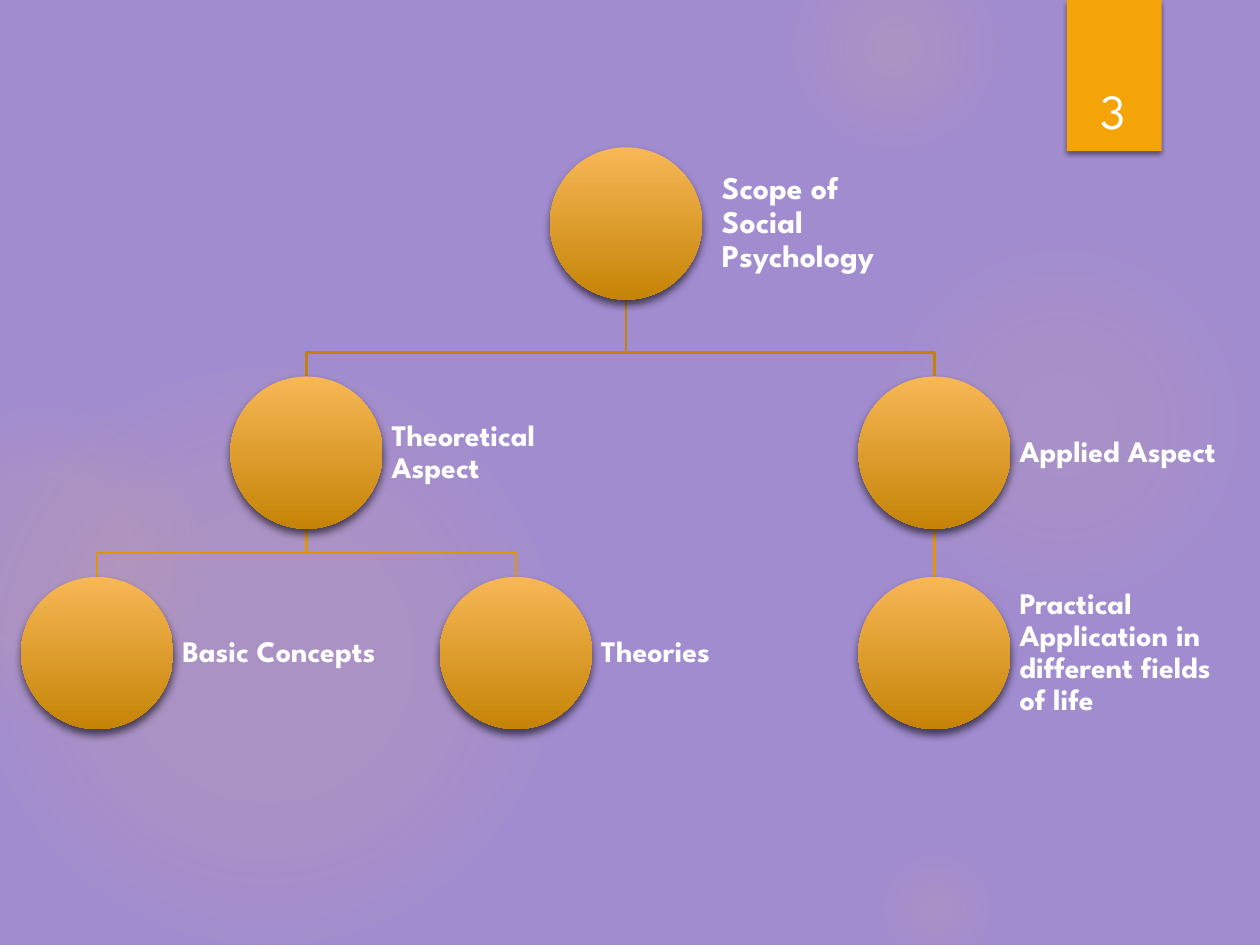
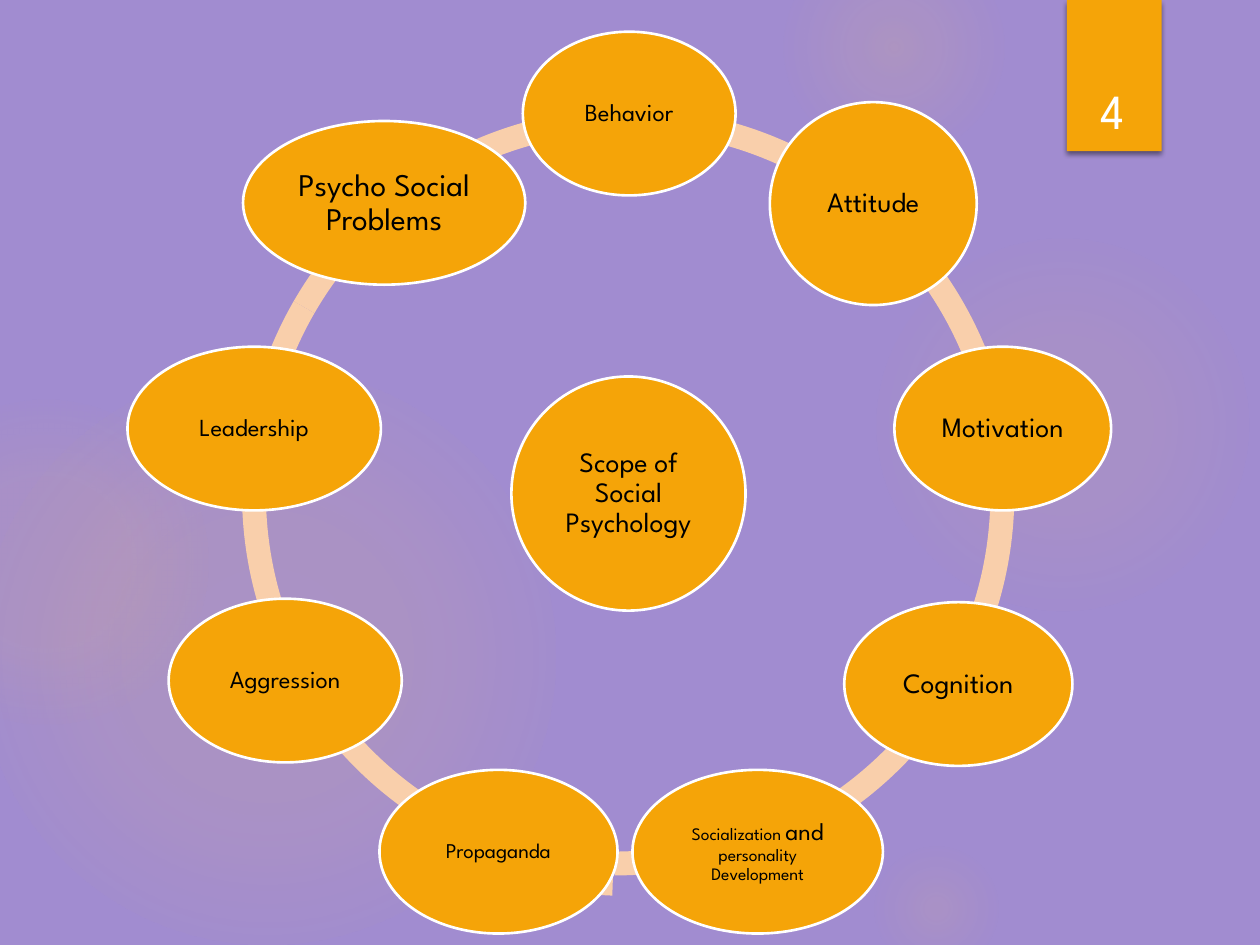
"""Build two slides on the scope of social psychology: a tree and a ring."""
import pptx
import pptx.dml.color
import pptx.enum.shapes
import pptx.enum.text
import pptx.oxml
import pptx.oxml.ns
import pptx.util

Cm = pptx.util.Cm
Pt = pptx.util.Pt
RGBColor = pptx.dml.color.RGBColor
Shape = pptx.enum.shapes.MSO_SHAPE
Line = pptx.enum.shapes.MSO_CONNECTOR
Align = pptx.enum.text.PP_ALIGN
Anchor = pptx.enum.text.MSO_ANCHOR

LILAC = RGBColor(0xA1, 0x8C, 0xD0)
GLOW = RGBColor(0xFA, 0xC9, 0x6A)
AMBER = RGBColor(0xF5, 0xA4, 0x08)
LIGHT = RGBColor(0xF7, 0xB7, 0x56)
DARK = RGBColor(0xC5, 0x84, 0x06)
TRUNK = RGBColor(0xC4, 0x83, 0x06)
TWIG = RGBColor(0xDE, 0x95, 0x07)
PEACH = RGBColor(0xF9, 0xCF, 0xAB)
WHITE = RGBColor(0xFF, 0xFF, 0xFF)
BLACK = RGBColor(0x00, 0x00, 0x00)
FONT = "League Spartan"
SPACE = 'xmlns:a="http://schemas.openxmlformats.org/drawingml/2006/main"'

GLOWS = [
    (17.5, 4.65, 7.82, [(0, 7), (36, 6), (69, 0)]),
    (15.8, -1.27, 4.45, [(0, 14), (36, 7), (73, 0)]),
    (17.5, 16.94, 2.74, [(0, 10), (31, 5), (66, 0)]),
    (-0.43, 7.42, 11.63, [(0, 11), (36, 10), (75, 0)]),
    (-2.34, 8.05, 6.55, [(0, 8), (36, 8), (72, 0)]),
]

ORB = 3.07
ROOT = 12.62
COLS = [1.96 + 4.22 * step for step in range(5)]
ROWS = [2.97, 7.59, 11.63]
LEAVES = [
    (1, 1, "Theoretical Aspect"),
    (0, 2, "Basic Concepts"),
    (2, 2, "Theories"),
    (4, 1, "Applied Aspect"),
    (4, 2, "Practical Application in different fields of life"),
]

RING = 15.57
HOME = (4.88, 2.18)
STEP = 24
SHIFTS = {66: (64.69, 89.94, 4.6, 2.08), 90: (91.99, 115.4, 4.83, 2.49)}
TALL = 3.3
NODES = [
    (10.31, 7.59, 4.72, 4.72, [("Scope of Social Psychology", 16)]),
    (10.54, 0.64, 4.29, TALL, [("Behavior", 14)]),
    (15.52, 2.06, 4.17, 4.09, [("Attitude", 16)]),
    (18.03, 6.99, 4.37, TALL, [("Motivation", 16)]),
    (17.02, 12.14, 4.6, TALL, [("Cognition", 16)]),
    (12.75, 15.52, 5.05, TALL,
     [("Socialization ", 10), ("and", 14), (" personality Development", 10)]),
    (7.65, 15.52, 4.8, TALL, [("Propaganda", 12)]),
    (3.4, 12.07, 4.7, TALL, [("Aggression", 14)]),
    (2.57, 6.99, 5.11, TALL, [("Leadership", 14)]),
    (4.9, 2.44, 5.69, TALL, [("Psycho Social Problems", 18)]),
]


class Deck:
    def __init__(self):
        self.show = pptx.Presentation()
        self.show.slide_width = Cm(25.4)
        self.show.slide_height = Cm(19.05)
        back = self.show.slide_master.background.fill
        back.solid()
        back.fore_color.rgb = LILAC

    def start(self, label):
        self.slide = self.show.slides.add_slide(self.show.slide_layouts[6])
        for left, top, size, stops in GLOWS:
            self.glow(left, top, size, stops)
        tab = self.form(Shape.RECTANGLE, 21.51, 0, 1.91, 3.05, AMBER)
        self.shade(tab, 45, 3, 2)
        box = self.slide.shapes.add_textbox(Cm(21.56), Cm(0.81), Cm(1.75), Cm(2.13))
        self.letter(box, [(label, 28)], WHITE, Align.CENTER, Anchor.BOTTOM, (0.25, 0.13))

    def form(self, kind, left, top, width, height, color=None, edge=None):
        shape = self.slide.shapes.add_shape(kind, Cm(left), Cm(top), Cm(width), Cm(height))
        shape.shadow.inherit = False
        if color is not None:
            shape.fill.solid()
            shape.fill.fore_color.rgb = color
        if edge is None:
            shape.line.fill.background()
        else:
            self.stroke(shape, edge)
        return shape

    def stroke(self, item, color):
        item.line.color.rgb = color
        item.line.width = Pt(1.5)

    def shade(self, shape, alpha, blur, dist):
        effects = shape.element.spPr.find(pptx.oxml.ns.qn("a:effectLst"))
        effects.append(pptx.oxml.parse_xml(
            f'<a:outerShdw {SPACE} blurRad="{Pt(blur)}" dist="{Pt(dist)}" dir="5400000" '
            f'algn="ctr" rotWithShape="0"><a:srgbClr val="{BLACK}">'
            f'<a:alpha val="{alpha * 1000}"/></a:srgbClr></a:outerShdw>'))

    def glow(self, left, top, size, stops):
        shape = self.form(Shape.OVAL, left, top, size, size)
        shape.fill.background()
        marks = "".join(
            f'<a:gs pos="{place * 1000}"><a:srgbClr val="{GLOW}">'
            f'<a:alpha val="{alpha * 1000}"/></a:srgbClr></a:gs>' for place, alpha in stops)
        blend = pptx.oxml.parse_xml(
            f'<a:gradFill {SPACE}><a:gsLst>{marks}</a:gsLst><a:path path="circle">'
            '<a:fillToRect l="50000" t="50000" r="50000" b="50000"/></a:path></a:gradFill>')
        props = shape.element.spPr
        props.replace(props.find(pptx.oxml.ns.qn("a:noFill")), blend)

    def letter(self, shape, runs, color, align, anchor, pads, bold=False, pitch=None):
        frame = shape.text_frame
        frame.word_wrap = True
        frame.vertical_anchor = anchor
        frame.margin_left = frame.margin_right = Cm(pads[0])
        frame.margin_top = frame.margin_bottom = Cm(pads[1])
        para = frame.paragraphs[0]
        para.alignment = align
        para.line_spacing = pitch
        for text, size in runs:
            run = para.add_run()
            run.text = text
            run.font.name = FONT
            run.font.size = Pt(size)
            run.font.bold = bold
            run.font.color.rgb = color

    def orb(self, center, top, text, size=17, gap=0, width=4.6, height=ORB):
        ball = self.form(Shape.OVAL, center - ORB / 2, top, ORB, ORB)
        ball.fill.gradient()
        ball.fill.gradient_angle = 270
        for stop, color in zip(ball.fill.gradient_stops, (LIGHT, DARK)):
            stop.color.rgb = color
        self.shade(ball, 60, 5, 3)
        box = self.slide.shapes.add_textbox(
            Cm(center + ORB / 2 + gap), Cm(top + (ORB - height) / 2), Cm(width), Cm(height))
        self.letter(box, [(text, size)], WHITE, Align.LEFT, Anchor.MIDDLE,
                    (0.18, 0.18), bold=True, pitch=0.9)

    def drop(self, center, top, end):
        line = self.slide.shapes.add_connector(
            Line.STRAIGHT, Cm(center), Cm(top), Cm(center), Cm(end))
        self.stroke(line, TWIG)
        line.element.spPr.append(pptx.oxml.parse_xml(f"<a:effectLst {SPACE}/>"))

    def branch(self, first, top, last, end, bend, color):
        pen = self.slide.shapes.build_freeform(Cm(first), Cm(top))
        pen.add_line_segments(
            [(Cm(first), Cm(bend)), (Cm(last), Cm(bend)), (Cm(last), Cm(end))], close=False)
        shape = pen.convert_to_shape()
        shape.shadow.inherit = False
        shape.fill.background()
        self.stroke(shape, color)

    def arc(self, start, end, left, top):
        band = self.form(Shape.BLOCK_ARC, left, top, RING, RING, PEACH)
        for spot, value in enumerate((start * 0.6, end * 0.6, 0.031)):
            band.adjustments[spot] = value

    def node(self, left, top, width, height, runs):
        shape = self.form(Shape.OVAL, left, top, width, height, AMBER, WHITE)
        self.letter(shape, runs, BLACK, Align.CENTER, Anchor.MIDDLE, (0.05, 0.05), pitch=0.9)


def tree(deck):
    deck.start("3")
    deck.drop(COLS[4], ROWS[1] + ORB, ROWS[2])
    for col in (4, 1):
        deck.branch(ROOT, ROWS[0] + ORB, COLS[col], ROWS[1], 7.11, TRUNK)
    for col in (2, 0):
        deck.branch(COLS[1], ROWS[1] + ORB, COLS[col], ROWS[2], 11.15, TWIG)
    deck.orb(ROOT, ROWS[0], "Scope of Social Psychology", 18, 0.22, 4.17, 4.22)
    for col, row, text in LEAVES:
        deck.orb(COLS[col], ROWS[row], text)


def ring(deck):
    deck.start("4")
    for start in range(18, 210, STEP):
        deck.arc(*SHIFTS.get(start, (start, start + STEP, *HOME)))
    deck.arc(210, 18, *HOME)
    for node in NODES:
        deck.node(*node)


def main():
    deck = Deck()
    tree(deck)
    ring(deck)
    deck.show.save("out.pptx")


if __name__ == "__main__":
    main()
